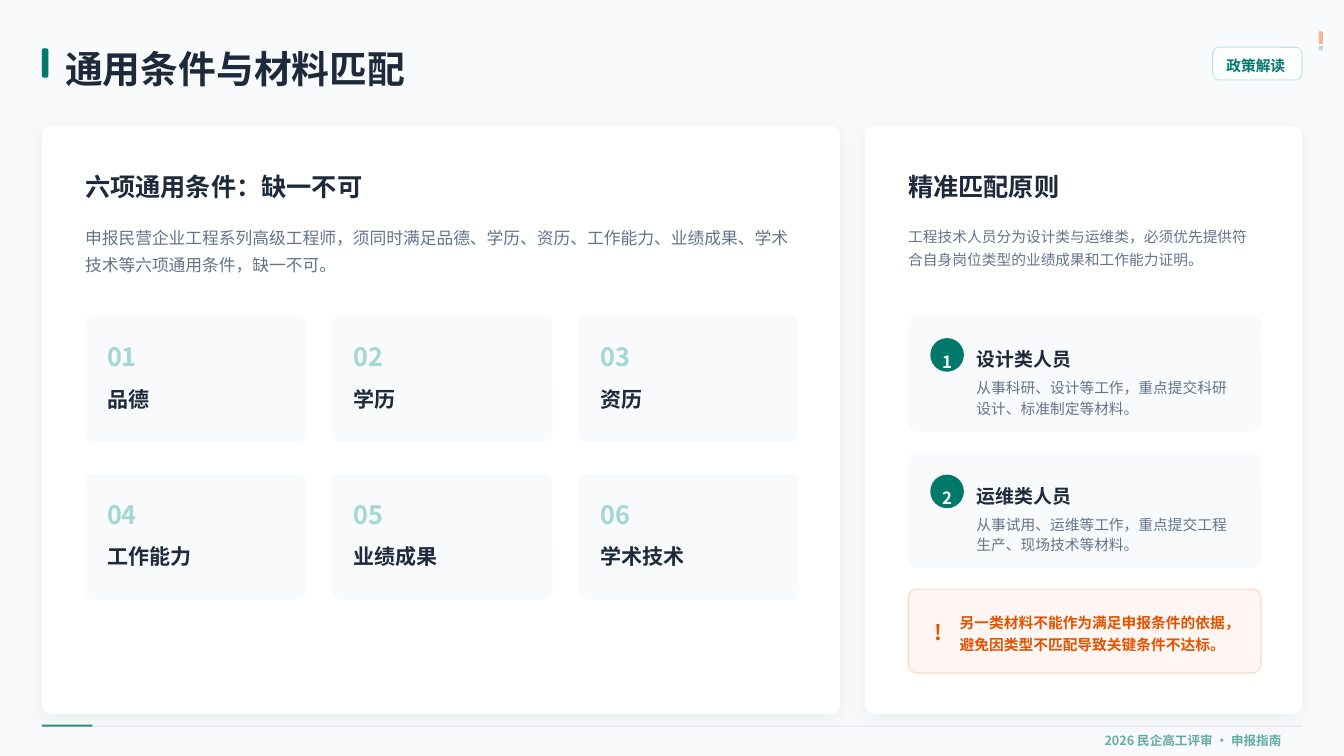
"""Build the slide that pairs general conditions with matching materials."""
from dataclasses import dataclass
from typing import Optional

from lxml.etree import SubElement
from pptx import Presentation
from pptx.dml.color import RGBColor
from pptx.enum.shapes import MSO_SHAPE as Shape
from pptx.enum.text import MSO_ANCHOR as Anchor, MSO_AUTO_SIZE as AutoSize, PP_ALIGN as Align
from pptx.oxml.ns import qn
from pptx.util import Emu, Pt

EMU_PER_PX = 12700
FONT = "Noto Sans CJK SC"
INK, SLATE, PALE, WHITE = "1E293B", "64748B", "F8FAFC", "FFFFFF"
GREEN, MINT, ORANGE = "00796B", "4DB6AC", "E65100"


@dataclass(frozen=True)
class Box:
    left: int
    top: int
    width: int
    height: int


@dataclass(frozen=True)
class Style:
    size: int
    color: str = INK
    bold: bool = True
    spacing: Optional[float] = 1.25
    alpha: int = 100
    align: Align = Align.LEFT


@dataclass(frozen=True)
class Shadow:
    blur: int
    distance: int


@dataclass(frozen=True)
class Role:
    name: str
    duty: str


HEADING = Style(24, spacing=1.08)
CONDITIONS = ["品德", "学历", "资历", "工作能力", "业绩成果", "学术技术"]
ROLES = [
    Role("设计类人员", "从事科研、设计等工作，重点提交科研设计、标准制定等材料。"),
    Role("运维类人员", "从事试用、运维等工作，重点提交工程生产、现场技术等材料。"),
]


def px(length: int) -> Emu:
    """Turn pixels into EMU."""
    return Emu(length * EMU_PER_PX)


def rgb(value: str) -> RGBColor:
    """Read a hex colour."""
    return RGBColor.from_string(value)


def fade(parent, alpha: int) -> None:
    """Give the colours inside an element an opacity in percent."""
    if alpha < 100:
        for color in parent.iter(qn("a:srgbClr")):
            SubElement(color, qn("a:alpha"), val=str(alpha * 1000))


def place(box: Box) -> tuple:
    """List the four lengths of a box in EMU."""
    return px(box.left), px(box.top), px(box.width), px(box.height)


def write(shape, text: str, style: Style, anchor: Anchor = Anchor.TOP) -> None:
    """Fill a shape with one styled paragraph and no margins."""
    frame = shape.text_frame
    frame.text = text
    frame.word_wrap = True
    frame.auto_size = AutoSize.NONE
    frame.vertical_anchor = anchor
    frame.margin_left = frame.margin_right = frame.margin_top = frame.margin_bottom = 0
    paragraph = frame.paragraphs[0]
    paragraph.alignment = style.align
    if style.spacing:
        paragraph.line_spacing = style.spacing
    font = paragraph.font
    font.name, font.size, font.bold = FONT, Pt(style.size), style.bold
    font.color.rgb = rgb(style.color)
    properties = paragraph._p.pPr.find(qn("a:defRPr"))
    properties.find(qn("a:latin")).addnext(
        properties.makeelement(qn("a:ea"), {"typeface": FONT}))
    fade(properties, style.alpha)


def add_text(slide, box: Box, text: str, style: Style) -> None:
    """Add a text box."""
    write(slide.shapes.add_textbox(*place(box)), text, style)


def add_panel(slide, box: Box, fill: str, radius: int = 0, alpha: int = 100,
              line: Optional[str] = None, line_alpha: int = 100,
              shadow: Optional[Shadow] = None):
    """Add a plain or rounded rectangle."""
    kind = Shape.ROUNDED_RECTANGLE if radius else Shape.RECTANGLE
    panel = slide.shapes.add_shape(kind, *place(box))
    if radius:
        panel.adjustments[0] = radius / min(box.width, box.height)
    panel.shadow.inherit = False
    panel.fill.solid()
    panel.fill.fore_color.rgb = rgb(fill)
    properties = panel._element.spPr
    fade(properties.find(qn("a:solidFill")), alpha)
    if line:
        panel.line.color.rgb = rgb(line)
        panel.line.width = Pt(1)
        fade(properties.find(qn("a:ln")), line_alpha)
    else:
        panel.line.fill.background()
    if shadow:
        outer = SubElement(properties.find(qn("a:effectLst")), qn("a:outerShdw"),
                           blurRad=str(px(shadow.blur)), dist=str(px(shadow.distance)),
                           dir="5400000", algn="ctr", rotWithShape="0")
        SubElement(outer, qn("a:srgbClr"), val="000000")
        fade(outer, 5)
    return panel


def add_condition(slide, index: int, name: str) -> None:
    """Add one numbered condition to the grid of three columns."""
    row, column = divmod(index, 3)
    left, top = 81 + 235 * column, 301 + 150 * row
    add_panel(slide, Box(left, top, 210, 120), PALE, radius=8)
    add_text(slide, Box(left + 21, top + 17, 76, 30), f"{index + 1:02}",
             Style(24, MINT, alpha=50))
    add_text(slide, Box(left + 21, top + 61, 200, 30), name, Style(20))


def add_role(slide, index: int, role: Role) -> None:
    """Add one numbered staff role."""
    top = 301 + 130 * index
    add_panel(slide, Box(865, top, 336, 110), PALE, radius=8)
    badge = add_panel(slide, Box(886, top + 21, 32, 32), GREEN, radius=16)
    write(badge, str(index + 1), Style(16, WHITE, spacing=1.67, align=Align.CENTER),
          Anchor.MIDDLE)
    add_text(slide, Box(930, top + 25, 277, 24), role.name, Style(18))
    add_text(slide, Box(930, top + 57, 250, 40), role.duty,
             Style(14, SLATE, bold=False, spacing=1.17))


def add_header(slide) -> None:
    """Add the title, its marker and the topic tag."""
    add_panel(slide, Box(40, 46, 6, 28), GREEN, radius=2, shadow=Shadow(2, 1))
    title = slide.shapes.title
    title.left, title.top, title.width, title.height = place(Box(62, 33, 1132, 54))
    write(title, "通用条件与材料匹配", Style(36))
    add_panel(slide, Box(1155, 45, 85, 31), WHITE, radius=6, alpha=60,
              line=MINT, line_alpha=30)
    add_text(slide, Box(1168, 50, 80, 21), "政策解读", Style(14, GREEN))
    add_panel(slide, Box(1256, 30, 4, 12), ORANGE, alpha=40)
    add_panel(slide, Box(1256, 44, 4, 4), MINT, alpha=40)


def add_footer(slide) -> None:
    """Add the footer rule and label."""
    add_panel(slide, Box(40, 691, 1200, 1), SLATE, alpha=15)
    add_panel(slide, Box(40, 690, 48, 2), GREEN, alpha=80)
    add_text(slide, Box(1052, 694, 207, 18), "2026 民企高工评审 · 申报指南",
             Style(12, GREEN, alpha=60))


def add_conditions(slide) -> None:
    """Add the card of general conditions."""
    add_panel(slide, Box(40, 120, 760, 560), WHITE, radius=8, shadow=Shadow(20, 4))
    add_text(slide, Box(81, 161, 300, 30), "六项通用条件：缺一不可", HEADING)
    add_text(slide, Box(81, 211, 680, 52),
             "申报民营企业工程系列高级工程师，须同时满足品德、学历、资历、工作能力、"
             "业绩成果、学术技术等六项通用条件，缺一不可。",
             Style(16, SLATE, bold=False, spacing=1.33))
    for index, name in enumerate(CONDITIONS):
        add_condition(slide, index, name)


def add_matching(slide) -> None:
    """Add the card of matching rules with its warning."""
    add_panel(slide, Box(824, 120, 416, 560), WHITE, radius=8, shadow=Shadow(20, 4))
    add_text(slide, Box(865, 161, 180, 30), "精准匹配原则", HEADING)
    add_text(slide, Box(865, 211, 336, 45),
             "工程技术人员分为设计类与运维类，必须优先提供符合自身岗位类型的业绩成果和工作能力证明。",
             Style(14, SLATE, bold=False, spacing=1.33))
    for index, role in enumerate(ROLES):
        add_role(slide, index, role)
    add_panel(slide, Box(865, 561, 336, 80), ORANGE, radius=8, alpha=5,
              line=ORANGE, line_alpha=20)
    add_text(slide, Box(882, 590, 24, 24), "!",
             Style(20, ORANGE, spacing=None, align=Align.CENTER))
    add_text(slide, Box(914, 580, 270, 44),
             "另一类材料不能作为满足申报条件的依据，避免因类型不匹配导致关键条件不达标。",
             Style(14, ORANGE))


def main() -> None:
    """Build and save the presentation."""
    deck = Presentation()
    deck.slide_width, deck.slide_height = px(1280), px(720)
    slide = deck.slides.add_slide(deck.slide_layouts[5])
    slide.background.fill.solid()
    slide.background.fill.fore_color.rgb = rgb(PALE)
    add_footer(slide)
    add_conditions(slide)
    add_matching(slide)
    add_header(slide)
    deck.save("out.pptx")


if __name__ == "__main__":
    main()
